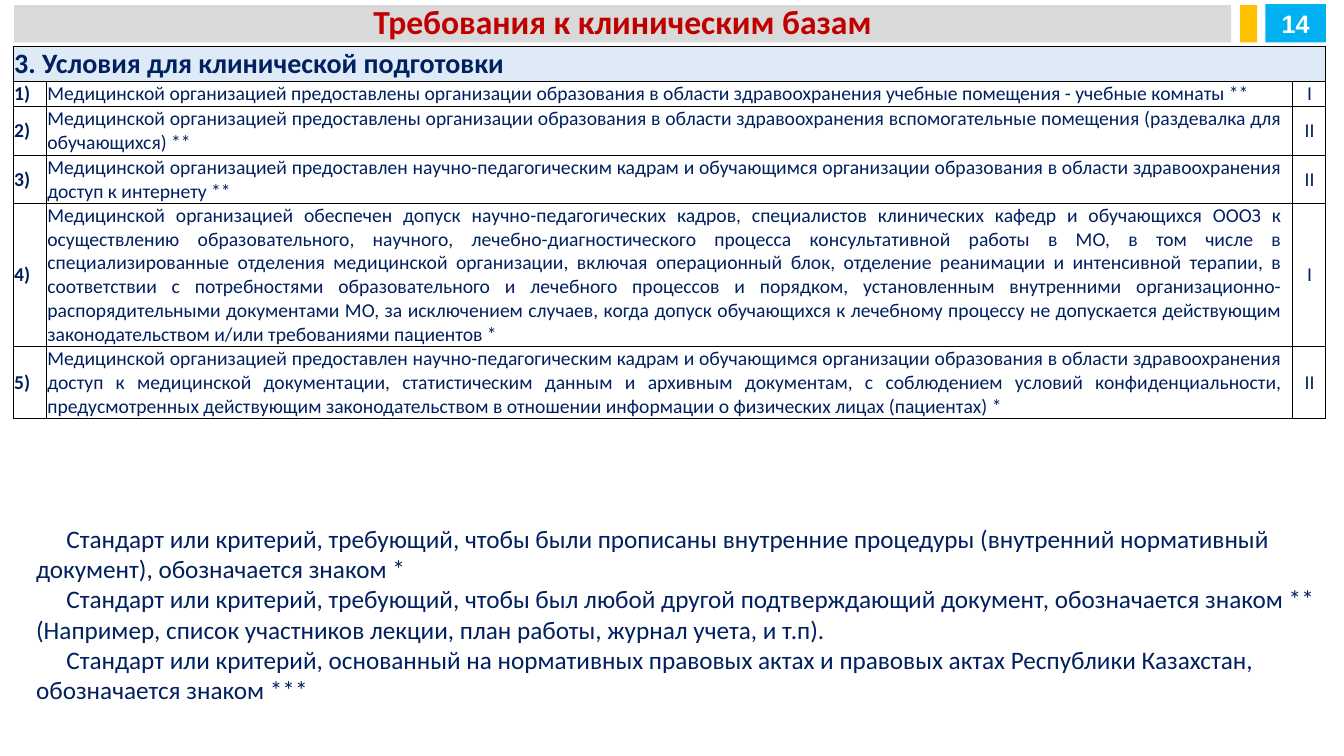
from dataclasses import dataclass

from lxml import etree
from pptx import Presentation
from pptx.dml.color import RGBColor
from pptx.enum import shapes, text
from pptx.oxml import ns
from pptx.util import Inches, Pt


@dataclass(frozen=True)
class Theme:
    """Colours, fonts and type sizes of the slide."""
    navy: str = "002060"
    red: str = "C00000"
    white: str = "FFFFFF"
    black: str = "000000"
    grey: str = "D9D9D9"
    amber: str = "FFC000"
    sky: str = "00B0F0"
    pale_blue: str = "DEEBF7"
    font: str = "Calibri"
    number_font: str = "Arial"
    title_size: int = 24
    section_size: int = 20
    note_size: int = 18
    cell_size: int = 14


THEME = Theme()
LEFT, CENTER, JUSTIFY = text.PP_ALIGN.LEFT, text.PP_ALIGN.CENTER, text.PP_ALIGN.JUSTIFY

TITLE = "Требования к клиническим базам"
SECTION = "3. Условия для клинической подготовки"
REQUIREMENTS = [
    ("Медицинской организацией предоставлены организации образования в области "
     "здравоохранения учебные помещения - учебные комнаты **", "I"),
    ("Медицинской организацией предоставлены организации образования в области "
     "здравоохранения вспомогательные помещения (раздевалка для обучающихся) **", "II"),
    ("Медицинской организацией предоставлен научно-педагогическим кадрам и обучающимся "
     "организации образования в области здравоохранения доступ к интернету **", "II"),
    ("Медицинской организацией обеспечен допуск научно-педагогических кадров, специалистов "
     "клинических кафедр и обучающихся ОООЗ к осуществлению образовательного, научного, "
     "лечебно-диагностического процесса консультативной работы в МО, в том числе в "
     "специализированные отделения медицинской организации, включая операционный блок, "
     "отделение реанимации и интенсивной терапии, в соответствии с потребностями "
     "образовательного и лечебного процессов и порядком, установленным внутренними "
     "организационно-распорядительными документами МО, за исключением случаев, когда допуск "
     "обучающихся к лечебному процессу не допускается действующим законодательством и/или "
     "требованиями пациентов *", "I"),
    ("Медицинской организацией предоставлен научно-педагогическим кадрам и обучающимся "
     "организации образования в области здравоохранения доступ к медицинской документации, "
     "статистическим данным и архивным документам, с соблюдением условий конфиденциальности, "
     "предусмотренных действующим законодательством в отношении информации о физических "
     "лицах (пациентах) *", "II"),
]
NOTES = [
    "Стандарт или критерий, требующий, чтобы были прописаны внутренние процедуры "
    "(внутренний нормативный документ), обозначается знаком *",
    "Стандарт или критерий, требующий, чтобы был любой другой подтверждающий документ, "
    "обозначается знаком ** (Например, список участников лекции, план работы, журнал учета, "
    "и т.п).",
    "Стандарт или критерий, основанный на нормативных правовых актах и правовых актах "
    "Республики Казахстан, обозначается знаком ***",
]
COLUMN_WIDTHS = [0.33, 12.36, 0.33]
ROW_HEIGHTS = [0.35, 0.25, 0.48, 0.48, 1.42, 0.71]


def paint(fill, color):
    """Give a fill one solid colour."""
    fill.solid()
    fill.fore_color.rgb = RGBColor.from_string(color)


def format_text(frame, size, color, bold=False, align=LEFT, font=THEME.font):
    """Format every paragraph and run of a text frame."""
    for paragraph in frame.paragraphs:
        paragraph.alignment = align
        for run in paragraph.runs:
            run.font.name = font
            run.font.size = Pt(size)
            run.font.bold = bold
            run.font.color.rgb = RGBColor.from_string(color)


def add_title(slide):
    """Turn the title placeholder into the grey heading bar."""
    title = slide.shapes.title
    title.left, title.top = Inches(0.14), Inches(0.05)
    title.width, title.height = Inches(12.07), Inches(0.37)
    paint(title.fill, THEME.grey)
    frame = title.text_frame
    frame.text = TITLE
    frame.auto_size = text.MSO_AUTO_SIZE.NONE
    frame.vertical_anchor = text.MSO_ANCHOR.MIDDLE
    frame.paragraphs[0].line_spacing = 0.9
    format_text(frame, THEME.title_size, THEME.red, True, CENTER)


def add_block(slide, left, top, width, height, color):
    """Add a plain filled rectangle."""
    block = slide.shapes.add_shape(shapes.MSO_SHAPE.RECTANGLE, Inches(left), Inches(top),
                                   Inches(width), Inches(height))
    block.shadow.inherit = False
    paint(block.fill, color)
    block.line.fill.background()
    return block


def add_page_number(slide, number):
    """Add the blue page number block."""
    block = add_block(slide, 12.55, 0.04, 0.6, 0.38, THEME.sky)
    frame = block.text_frame
    frame.text = number
    frame.vertical_anchor = text.MSO_ANCHOR.MIDDLE
    format_text(frame, THEME.note_size, THEME.white, True, CENTER, THEME.number_font)


def add_borders(cell):
    """Draw a thin line on all four sides of a cell."""
    properties = cell._tc.get_or_add_tcPr()
    for side in ("a:lnL", "a:lnR", "a:lnT", "a:lnB"):
        line = etree.SubElement(properties, ns.qn(side), w=str(Pt(1)))
        solid = etree.SubElement(line, ns.qn("a:solidFill"))
        etree.SubElement(solid, ns.qn("a:srgbClr"), val=THEME.black)


def fill_cell(cell, content, fill, size=THEME.cell_size, bold=False, align=JUSTIFY,
              right_margin=0):
    """Write and format one table cell."""
    add_borders(cell)
    paint(cell.fill, fill)
    cell.margin_top = cell.margin_bottom = 0
    cell.margin_left, cell.margin_right = Inches(0.01), Inches(right_margin)
    cell.vertical_anchor = text.MSO_ANCHOR.MIDDLE
    cell.text_frame.text = content
    format_text(cell.text_frame, size, THEME.navy, bold, align)


def add_requirements(slide):
    """Add the table of numbered requirements under a merged heading."""
    frame = slide.shapes.add_table(len(ROW_HEIGHTS), len(COLUMN_WIDTHS), Inches(0.13),
                                   Inches(0.46), Inches(sum(COLUMN_WIDTHS)),
                                   Inches(sum(ROW_HEIGHTS)))
    table = frame.table
    for column, width in zip(table.columns, COLUMN_WIDTHS):
        column.width = Inches(width)
    for row, height in zip(table.rows, ROW_HEIGHTS):
        row.height = Inches(height)
    heading = table.cell(0, 0)
    heading.merge(table.cell(0, 2))
    fill_cell(heading, SECTION, THEME.pale_blue, THEME.section_size, True)
    for column in (1, 2):
        add_borders(table.cell(0, column))
    for index, (requirement, rank) in enumerate(REQUIREMENTS, 1):
        fill_cell(table.cell(index, 0), f"{index})", THEME.white, bold=True)
        fill_cell(table.cell(index, 1), requirement, THEME.white, right_margin=0.1)
        fill_cell(table.cell(index, 2), rank, THEME.white, align=CENTER)


def add_notes(slide):
    """Add the explanations of the star marks."""
    box = slide.shapes.add_textbox(Inches(0.26), Inches(5.14), Inches(12.89), Inches(1.92))
    frame = box.text_frame
    frame.word_wrap = True
    frame.text = "\n".join(NOTES)
    format_text(frame, THEME.note_size, THEME.navy)
    for paragraph in frame.paragraphs:
        paragraph._p.get_or_add_pPr().set("indent", str(Inches(0.3)))


def main():
    """Build and save the slide."""
    presentation = Presentation()
    presentation.slide_width, presentation.slide_height = Inches(13.33), Inches(7.5)
    slide = presentation.slides.add_slide(presentation.slide_layouts.get_by_name("Title Only"))
    add_title(slide)
    add_block(slide, 12.3, 0.05, 0.17, 0.37, THEME.amber)
    add_page_number(slide, "14")
    add_requirements(slide)
    add_notes(slide)
    presentation.save("out.pptx")


if __name__ == "__main__":
    main()
